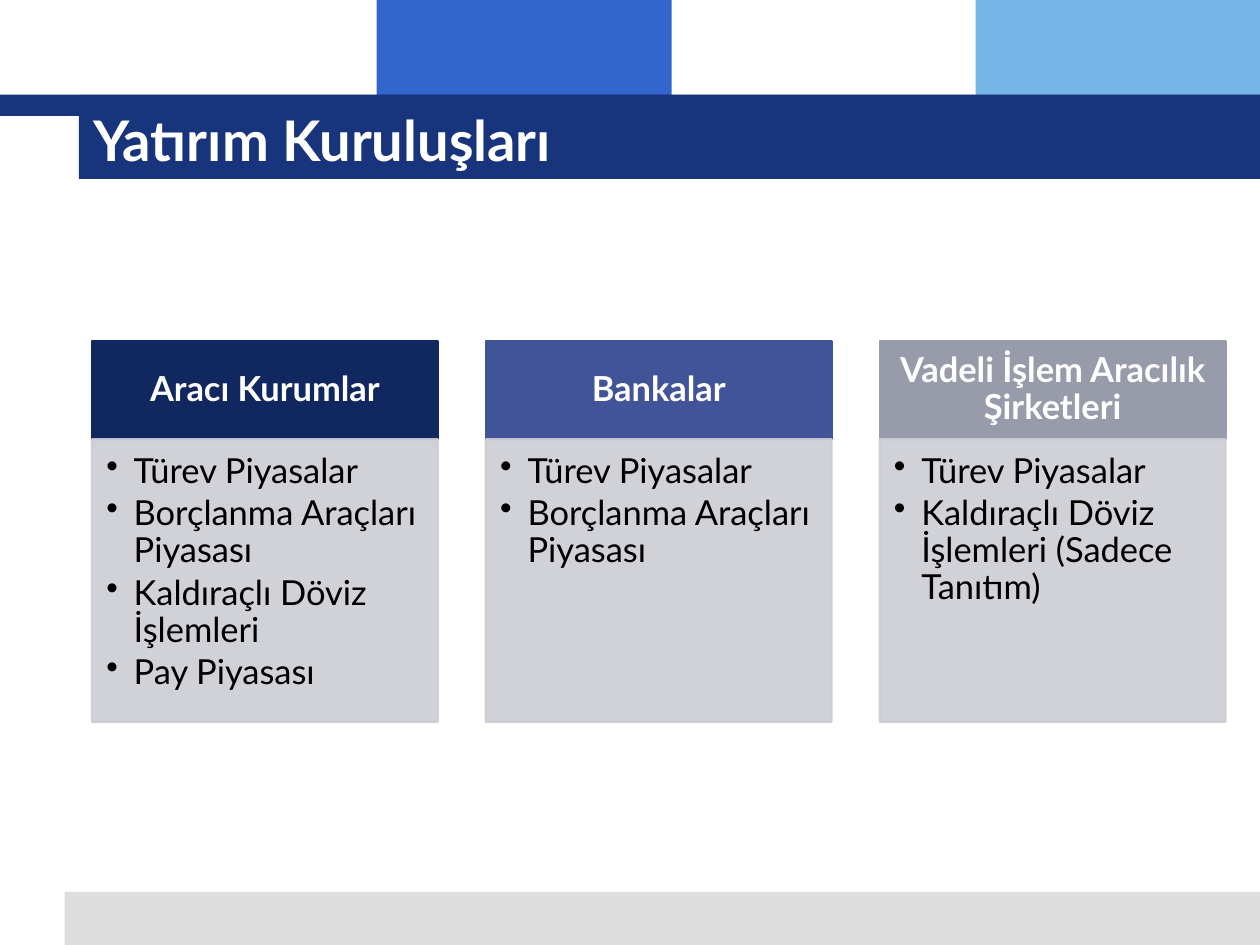
from dataclasses import dataclass

from lxml import etree
from pptx import Presentation
from pptx.dml.color import RGBColor
from pptx.enum.shapes import MSO_SHAPE
from pptx.enum.text import MSO_ANCHOR, MSO_AUTO_SIZE, PP_ALIGN
from pptx.oxml.ns import qn
from pptx.util import Inches, Pt

RECTANGLE = MSO_SHAPE.RECTANGLE
TOP, MIDDLE = MSO_ANCHOR.TOP, MSO_ANCHOR.MIDDLE
LEFT, CENTER = PP_ALIGN.LEFT, PP_ALIGN.CENTER
NO_AUTOFIT = MSO_AUTO_SIZE.NONE


@dataclass(frozen=True)
class Theme:
    font: str = "Lato"
    title_size: float = 45.5
    card_size: float = 28
    light_text: str = "FFFFFF"
    dark_text: str = "000000"
    royal: str = "3366CC"
    sky: str = "77B7E7"
    navy: str = "17347D"
    footer: str = "DDDDDD"
    card_body: str = "CCCDD4"
    card_opacity: int = 90


THEME = Theme()
TITLE = "Yatırım Kuruluşları"

DECOR = [
    (4.25, 0, 3.33, 1.3, THEME.royal),
    (11.01, 0, 3.21, 1.3, THEME.sky),
    (0, 1.07, 14.22, 0.24, THEME.navy),
    (0.89, 1.07, 13.33, 0.95, THEME.navy),
    (0.73, 10.07, 13.49, 0.6, THEME.footer),
]

INSTITUTIONS = [
    ("Aracı Kurumlar", "102760",
     ["Türev Piyasalar", "Borçlanma Araçları Piyasası",
      "Kaldıraçlı Döviz İşlemleri", "Pay Piyasası"]),
    ("Bankalar", "415498",
     ["Türev Piyasalar", "Borçlanma Araçları Piyasası"]),
    ("Vadeli İşlem Aracılık Şirketleri", "989BA9",
     ["Türev Piyasalar", "Kaldıraçlı Döviz İşlemleri (Sadece Tanıtım)"]),
]

CARDS_LEFT, CARDS_RIGHT = 1.04, 13.83
CARD_WIDTH = 3.9
HEADER_TOP, HEADER_HEIGHT, BODY_HEIGHT = 3.85, 1.11, 3.19
BULLET_INDENT = 0.31


def add_block(slide, left, top, width, height, color):
    block = slide.shapes.add_shape(
        RECTANGLE, Inches(left), Inches(top), Inches(width), Inches(height))
    block.shadow.inherit = False
    block.fill.solid()
    block.fill.fore_color.rgb = RGBColor.from_string(color)
    block.line.fill.background()
    return block


def outline(block, color):
    block.line.color.rgb = RGBColor.from_string(color)
    block.line.width = Pt(2)


def set_opacity(block, percent):
    for color in block._element.spPr.iter(qn("a:srgbClr")):
        etree.SubElement(color, qn("a:alpha"), val=str(percent * 1000))


def set_frame(frame, anchor, insets):
    frame.word_wrap = True
    frame.auto_size = NO_AUTOFIT
    frame.vertical_anchor = anchor
    (frame.margin_left, frame.margin_top,
     frame.margin_right, frame.margin_bottom) = map(Inches, insets)


def add_bullet(paragraph):
    properties = paragraph._p.get_or_add_pPr()
    properties.set("marL", str(Inches(BULLET_INDENT)))
    properties.set("indent", str(-Inches(BULLET_INDENT)))
    etree.SubElement(properties, qn("a:buChar"), char="•")


def style(paragraph, size, color, align, bold=False):
    paragraph.alignment = align
    font = paragraph.font
    font.name = THEME.font
    font.size = Pt(size)
    font.bold = bold
    font.color.rgb = RGBColor.from_string(color)


def add_title(slide):
    title = slide.shapes.title
    title.left, title.top = Inches(0.95), Inches(1.08)
    title.width, title.height = Inches(13.27), Inches(0.99)
    title.text_frame.text = TITLE
    set_frame(title.text_frame, MIDDLE, (0.1, 0.05, 0.1, 0.05))
    style(title.text_frame.paragraphs[0], THEME.title_size,
          THEME.light_text, LEFT, bold=True)
    slide.shapes._spTree.append(title._element)


def add_card_header(slide, left, name, color):
    header = add_block(slide, left, HEADER_TOP, CARD_WIDTH, HEADER_HEIGHT, color)
    outline(header, color)
    set_frame(header.text_frame, MIDDLE, (0.22, 0.12, 0.22, 0.12))
    header.text_frame.text = name
    heading = header.text_frame.paragraphs[0]
    heading.line_spacing = 0.9
    style(heading, THEME.card_size, THEME.light_text, CENTER, bold=True)


def add_card_body(slide, left, markets):
    body = add_block(slide, left, HEADER_TOP + HEADER_HEIGHT,
                     CARD_WIDTH, BODY_HEIGHT, THEME.card_body)
    outline(body, THEME.card_body)
    set_opacity(body, THEME.card_opacity)
    set_frame(body.text_frame, TOP, (0.16, 0.16, 0.22, 0.24))
    body.text_frame.text = "\n".join(markets)
    for market in body.text_frame.paragraphs:
        add_bullet(market)
        market.level = 1
        market.line_spacing = 0.9
        market.space_after = Pt(0.15 * THEME.card_size)
        style(market, THEME.card_size, THEME.dark_text, LEFT)


def main():
    presentation = Presentation()
    presentation.slide_width = Inches(14.22)
    presentation.slide_height = Inches(10.67)
    slide = presentation.slides.add_slide(presentation.slide_layouts[5])
    for left, top, width, height, color in DECOR:
        add_block(slide, left, top, width, height, color)
    add_title(slide)
    pitch = (CARDS_RIGHT - CARD_WIDTH - CARDS_LEFT) / (len(INSTITUTIONS) - 1)
    for column, (name, color, markets) in enumerate(INSTITUTIONS):
        left = CARDS_LEFT + column * pitch
        add_card_header(slide, left, name, color)
        add_card_body(slide, left, markets)
    presentation.save("out.pptx")


if __name__ == "__main__":
    main()
